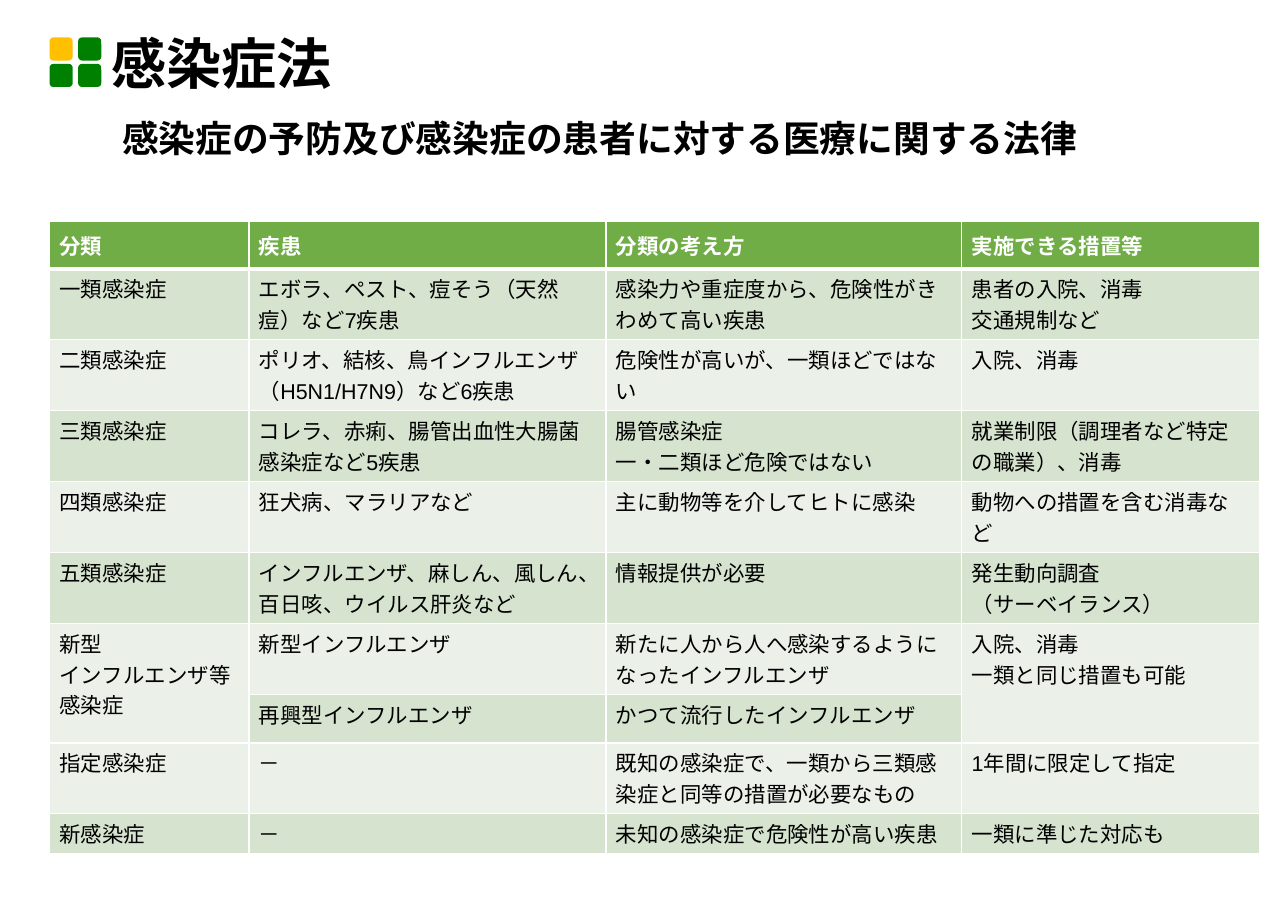
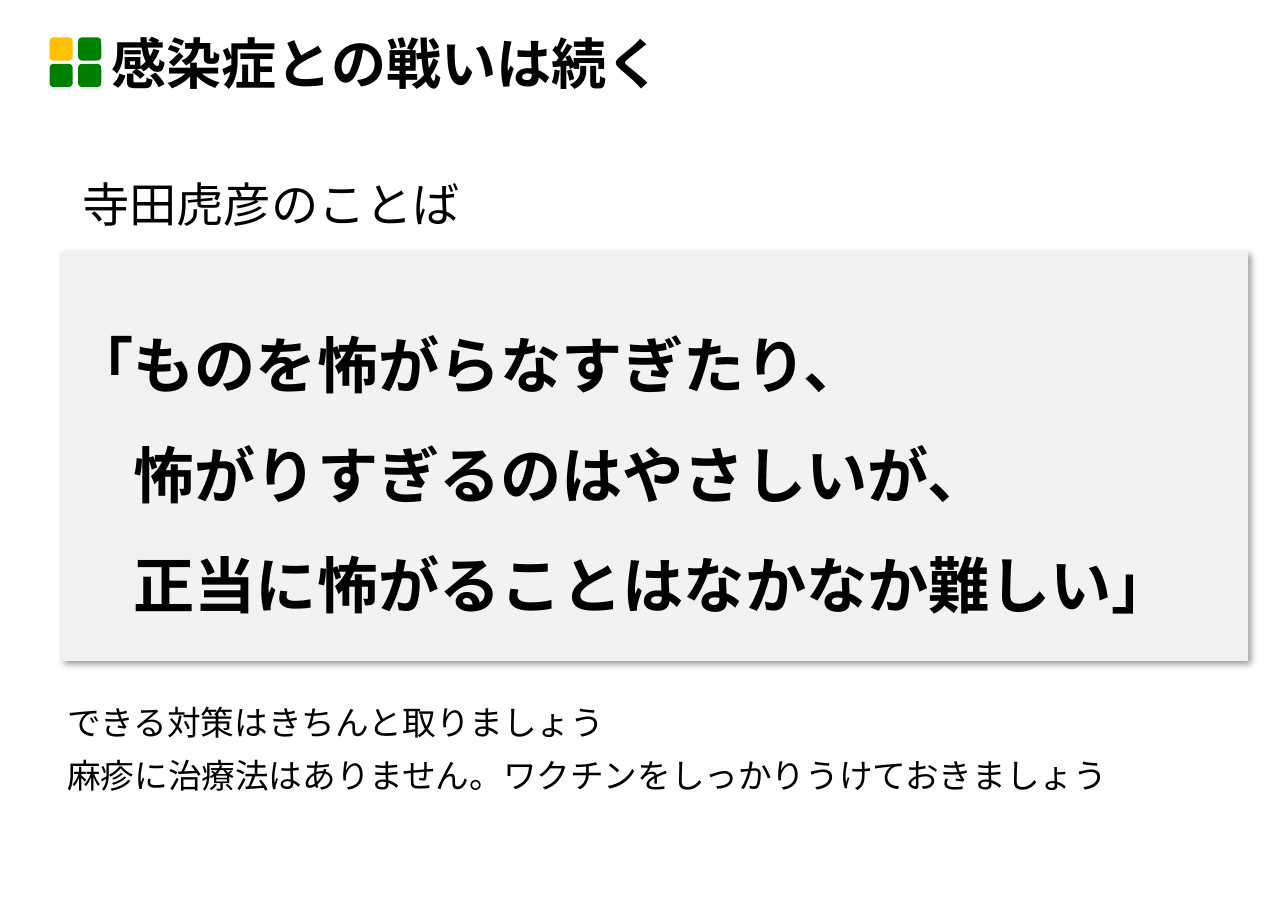
from dataclasses import dataclass
from itertools import product

from lxml.etree import SubElement
from pptx import Presentation
from pptx.dml.color import RGBColor
from pptx.enum.lang import MSO_LANGUAGE_ID as Language
from pptx.enum.shapes import MSO_SHAPE as Preset
from pptx.enum.text import MSO_ANCHOR as Anchor, MSO_AUTO_SIZE as AutoSize, PP_ALIGN as Align
from pptx.oxml import parse_xml
from pptx.oxml.ns import nsdecls, qn
from pptx.util import Inches, Pt


@dataclass(frozen=True)
class TextStyle:
    """Type settings for one kind of text."""
    size: float
    font: str = "Arial"
    bold: bool = False
    color: str = "000000"
    line_spacing: float = 0.9
    space_before: float = 0
    space_after: float = 0


@dataclass(frozen=True)
class Theme:
    """Colours and type styles shared by all slides."""
    accent: str = "FFC000"
    green: str = "008000"
    panel: str = "F2F2F2"
    white: str = "FFFFFF"
    header_fill: str = "70AD47"
    bands: tuple = ("D5E3CF", "EBF1E9")
    east_asian: str = "Noto Sans CJK JP"
    title: TextStyle = TextStyle(36, "Noto Sans CJK JP", True)
    subtitle: TextStyle = TextStyle(24, bold=True)
    lead: TextStyle = TextStyle(30.9, "Noto Sans CJK JP", space_before=11)
    items: TextStyle = TextStyle(22, "Noto Sans CJK JP", space_before=11)
    quote: TextStyle = TextStyle(40, bold=True, line_spacing=1.5)
    table_head: TextStyle = TextStyle(14, bold=True, color="FFFFFF", line_spacing=1.0)
    table_body: TextStyle = TextStyle(14, line_spacing=Pt(20), space_before=6, space_after=6)


class Deck:
    """Builds slides on a grid of 100 columns by 100 rows."""

    def __init__(self, theme):
        self.theme = theme
        self.presentation = Presentation()
        self.presentation.slide_width = Inches(11.69)
        self.presentation.slide_height = Inches(8.27)
        self.slide = None

    def columns(self, count):
        """Return the width of a number of grid columns."""
        return round(self.presentation.slide_width * count / 100)

    def rows(self, count):
        """Return the height of a number of grid rows."""
        return round(self.presentation.slide_height * count / 100)

    def box(self, left, top, width, height):
        """Turn grid values into a position and a size."""
        return self.columns(left), self.rows(top), self.columns(width), self.rows(height)

    def move(self, shape, *grid):
        """Place a shape on the grid."""
        shape.left, shape.top, shape.width, shape.height = self.box(*grid)

    def set_lines(self, text_frame, lines, style, anchor=Anchor.TOP):
        """Fill a text frame with one paragraph per line and style it."""
        text_frame.word_wrap = True
        text_frame.vertical_anchor = anchor
        for index, line in enumerate(lines):
            paragraph = text_frame.add_paragraph() if index else text_frame.paragraphs[0]
            paragraph.text = line
            paragraph.alignment = Align.LEFT
            paragraph.line_spacing = style.line_spacing
            paragraph.space_before = Pt(style.space_before)
            paragraph.space_after = Pt(style.space_after)
            for run in paragraph.runs:
                self.style_run(run, style)

    def style_run(self, run, style):
        """Apply a text style to one run."""
        font = run.font
        font.size, font.name, font.bold = Pt(style.size), style.font, style.bold
        font.color.rgb = RGBColor.from_string(style.color)
        font.language_id = Language.JAPANESE
        SubElement(font._element, qn("a:ea")).set("typeface", self.theme.east_asian)

    def fill(self, target, color):
        """Give a shape or a cell a solid fill."""
        target.fill.solid()
        target.fill.fore_color.rgb = RGBColor.from_string(color)

    def new_slide(self, title, layout):
        """Start a slide with its title and the four-square mark."""
        self.slide = self.presentation.slides.add_slide(self.presentation.slide_layouts[layout])
        shape = self.slide.shapes.title
        self.move(shape, 7.78, 3.26, 84.86, 8.22)
        shape.text_frame.auto_size = AutoSize.NONE
        self.set_lines(shape.text_frame, [title], self.theme.title, Anchor.MIDDLE)
        self.mark()

    def mark(self):
        """Draw the grouped two by two squares beside the title."""
        group = self.slide.shapes.add_group_shape()
        for row, column in product(range(2), repeat=2):
            grid = self.box(3.85 + 2.22 * column, 4.11 + 2.9 * row, 1.8, 2.54)
            square = group.shapes.add_shape(Preset.ROUNDED_RECTANGLE, *grid)
            square.shadow.inherit = False
            square.line.fill.background()
            self.fill(square, self.theme.green if row or column else self.theme.accent)

    def text(self, line, style, *grid, anchor=Anchor.TOP):
        """Add a text box."""
        shape = self.slide.shapes.add_textbox(*self.box(*grid))
        self.set_lines(shape.text_frame, [line], style, anchor)

    def items(self, lines, *grid):
        """Fill the body placeholder with lines without bullets."""
        shape = self.slide.placeholders[1]
        self.move(shape, *grid)
        shape.text_frame.auto_size = AutoSize.NONE
        self.set_lines(shape.text_frame, lines, self.theme.items)
        for paragraph in shape.text_frame.paragraphs:
            properties = paragraph._p.get_or_add_pPr()
            properties.set("marL", "0")
            properties.set("indent", "0")
            SubElement(properties, qn("a:buNone"))

    def panel(self, line, *grid):
        """Add a shadowed panel that holds a quotation."""
        shape = self.slide.shapes.add_shape(Preset.RECTANGLE, *self.box(*grid))
        self.fill(shape, self.theme.panel)
        shape.line.fill.background()
        shape.shadow.inherit = False
        effects = shape._element.spPr.find(qn("a:effectLst"))
        effects.append(parse_xml(
            f'<a:outerShdw {nsdecls("a")} blurRad="{Pt(4)}" dist="{Pt(3)}" dir="2700000" '
            'algn="tl" rotWithShape="0"><a:srgbClr val="000000"><a:alpha val="40000"/>'
            '</a:srgbClr></a:outerShdw>'))
        self.set_lines(shape.text_frame, [line], self.theme.quote, Anchor.MIDDLE)

    def border(self, cell, bottom):
        """Draw white cell borders with the given bottom width in points."""
        properties = cell._tc.get_or_add_tcPr()
        for index, (side, width) in enumerate(zip("LRTB", (1, 1, 1, bottom))):
            properties.insert(index, parse_xml(
                f'<a:ln{side} {nsdecls("a")} w="{Pt(width)}"><a:solidFill>'
                f'<a:srgbClr val="{self.theme.white}"/></a:solidFill></a:ln{side}>'))

    def table(self, records, left, top, widths, heights, merges):
        """Add a banded table; each merge joins a cell with the one below."""
        grid = self.box(left, top, sum(widths), sum(heights))
        table = self.slide.shapes.add_table(len(heights), len(widths), *grid).table
        for column, width in zip(table.columns, widths):
            column.width = self.columns(width)
        for row, height in zip(table.rows, heights):
            row.height = self.rows(height)
        for row, record in enumerate(records):
            for column, line in enumerate(record):
                self.cell(table.cell(row, column), line, row)
        for row, column in merges:
            table.cell(row, column).merge(table.cell(row + 1, column))

    def cell(self, cell, line, row):
        """Fill and format one table cell."""
        theme, header = self.theme, row == 0
        cell.margin_left = cell.margin_right = self.columns(0.77)
        cell.margin_top = cell.margin_bottom = self.rows(0.5)
        self.fill(cell, theme.header_fill if header else theme.bands[(row - 1) % 2])
        self.border(cell, 3 if header else 1)
        if line:
            style = theme.table_head if header else theme.table_body
            self.set_lines(cell.text_frame, [line], style)
        cell.vertical_anchor = Anchor.MIDDLE if header else Anchor.TOP


CATEGORIES = [
    ("分類", "疾患", "分類の考え方", "実施できる措置等"),
    ("一類感染症", "エボラ、ペスト、痘そう（天然痘）など7疾患",
     "感染力や重症度から、危険性がきわめて高い疾患", "患者の入院、消毒\n交通規制など"),
    ("二類感染症", "ポリオ、結核、鳥インフルエンザ（H5N1/H7N9）など6疾患",
     "危険性が高いが、一類ほどではない", "入院、消毒"),
    ("三類感染症", "コレラ、赤痢、腸管出血性大腸菌感染症など5疾患",
     "腸管感染症\n一・二類ほど危険ではない", "就業制限（調理者など特定の職業）、消毒"),
    ("四類感染症", "狂犬病、マラリアなど", "主に動物等を介してヒトに感染", "動物への措置を含む消毒など"),
    ("五類感染症", "インフルエンザ、麻しん、風しん、百日咳、ウイルス肝炎など",
     "情報提供が必要", "発生動向調査\n（サーベイランス）"),
    ("新型\nインフルエンザ等感染症", "新型インフルエンザ",
     "新たに人から人へ感染するようになったインフルエンザ", "入院、消毒\n一類と同じ措置も可能"),
    ("", "再興型インフルエンザ", "かつて流行したインフルエンザ", ""),
    ("指定感染症", "－", "既知の感染症で、一類から三類感染症と同等の措置が必要なもの", "1年間に限定して指定"),
    ("新感染症", "－", "未知の感染症で危険性が高い疾患", "一類に準じた対応も"),
]


def main():
    """Build and save the two slides."""
    theme = Theme()
    deck = Deck(theme)

    deck.new_slide("感染症法", layout=5)
    deck.text("感染症の予防及び感染症の患者に対する医療に関する法律", theme.subtitle,
              8.64, 11.61, 87.6, 7.74, anchor=Anchor.MIDDLE)
    deck.table(CATEGORIES, 3.85, 24.3, widths=(15.48, 27.72, 27.63, 23.1),
               heights=(5.2, *[7.79] * 6, 5.32, 7.79, 4.35), merges=((6, 0), (6, 3)))

    deck.new_slide("感染症との戦いは続く", layout=1)
    deck.text("寺田虎彦のことば", theme.lead, 5.56, 19.35, 94.4, 6.77)
    deck.panel("「ものを怖がらなすぎたり、\n　怖がりすぎるのはやさしいが、\n　正当に怖がることはなかなか難しい」",
               4.79, 27.57, 92.13, 44.98)
    deck.items(["できる対策はきちんと取りましょう",
                "麻疹に治療法はありません。ワクチンをしっかりうけておきましょう"],
               4.36, 76.9, 91, 18)

    deck.presentation.save("out.pptx")


if __name__ == "__main__":
    main()
